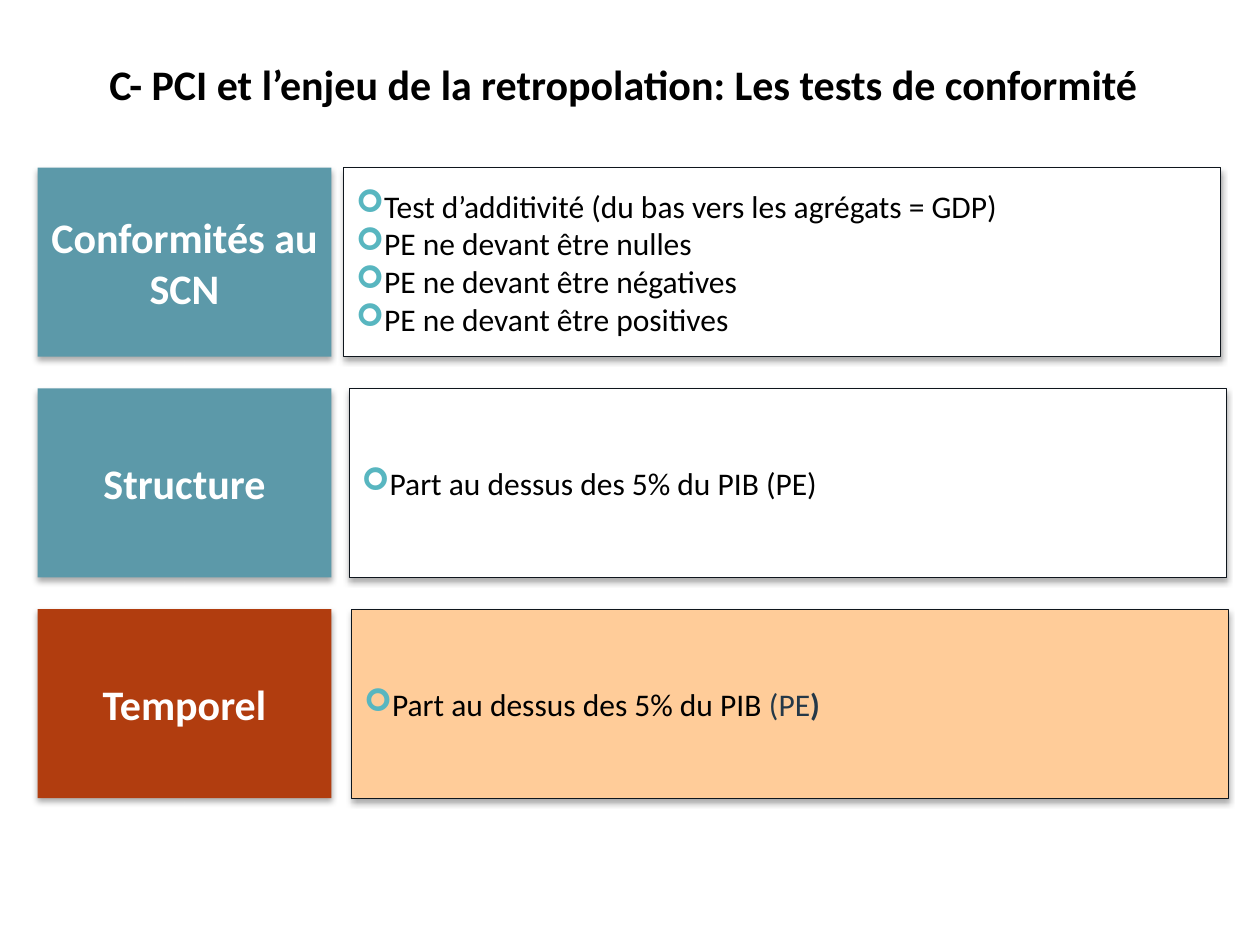
import lxml.etree
import pptx
import pptx.dml.color
import pptx.enum.shapes
import pptx.enum.text
import pptx.oxml.ns
import pptx.util

Cm = pptx.util.Cm
Pt = pptx.util.Pt
RGBColor = pptx.dml.color.RGBColor
ALIGN = pptx.enum.text.PP_ALIGN
qn = pptx.oxml.ns.qn

BLACK = RGBColor(0x00, 0x00, 0x00)
WHITE = RGBColor(0xFF, 0xFF, 0xFF)
TEAL = RGBColor(0x5C, 0x99, 0xA9)
RUST = RGBColor(0xB1, 0x3D, 0x0F)
PEACH = RGBColor(0xFF, 0xCC, 0x99)
EDGE = RGBColor(0x0F, 0x16, 0x1D)
NAVY = RGBColor(0x25, 0x38, 0x48)
AQUA = RGBColor(0x58, 0xB6, 0xC0)

TOP, STEP, HIGH = 3.38, 4.45, 3.81
ROWS = [
    ("Conformités au SCN", TEAL, 6.93, WHITE, [
        [("Test d’additivité (du bas vers les agrégats = GDP)", BLACK, False)],
        [("PE ne devant être nulles", BLACK, False)],
        [("PE ne devant être négatives", BLACK, False)],
        [("PE ne devant être positives", BLACK, False)],
    ]),
    ("Structure", TEAL, 7.04, WHITE, [
        [("Part au dessus des 5% du PIB (PE)", BLACK, False)],
    ]),
    ("Temporel", RUST, 7.09, PEACH, [
        [("Part au dessus des 5% du PIB ", BLACK, False),
         ("(PE", NAVY, False), (")", NAVY, True)],
    ]),
]


class Deck:
    """Hold the text style and the current slide, and draw its elements."""

    def __init__(self, slide, face="Calibri", head=24, body=18):
        self.slide = slide
        self.face = face
        self.head = head
        self.body = body

    def style(self, run, size, color, bold):
        font = run.font
        font.name = self.face
        font.size = Pt(size)
        font.bold = bold
        font.color.rgb = color

    def label(self, frame, text, color):
        frame.word_wrap = True
        frame.vertical_anchor = pptx.enum.text.MSO_ANCHOR.MIDDLE
        frame.text = text
        para = frame.paragraphs[0]
        para.alignment = ALIGN.CENTER
        self.style(para.runs[0], self.head, color, True)

    def title(self, text, left, top, width, height):
        box = self.slide.shapes.add_textbox(
            Cm(left), Cm(top), Cm(width), Cm(height))
        self.label(box.text_frame, text, BLACK)

    def shade(self, shape):
        shape.shadow.inherit = False
        effects = shape._element.spPr.find(qn("a:effectLst"))
        outer = lxml.etree.SubElement(
            effects, qn("a:outerShdw"), blurRad=str(Pt(3.5)),
            dist=str(Pt(2.2)), dir="5400000", rotWithShape="0")
        color = lxml.etree.SubElement(outer, qn("a:srgbClr"), val=str(BLACK))
        lxml.etree.SubElement(color, qn("a:alpha"), val="32000")

    def block(self, left, top, width, fill):
        shape = self.slide.shapes.add_shape(
            pptx.enum.shapes.MSO_SHAPE.RECTANGLE,
            Cm(left), Cm(top), Cm(width), Cm(HIGH))
        shape.fill.solid()
        shape.fill.fore_color.rgb = fill
        shape.line.fill.background()
        self.shade(shape)
        return shape

    def tile(self, text, top, fill):
        shape = self.block(0.76, top, 5.92, fill)
        self.label(shape.text_frame, text, WHITE)

    def bullet(self, para):
        props = para._p.get_or_add_pPr()
        props.set("marL", "0")
        props.set("indent", str(-Cm(1.27)))
        color = lxml.etree.SubElement(props, qn("a:buClr"))
        lxml.etree.SubElement(color, qn("a:srgbClr"), val=str(AQUA))
        lxml.etree.SubElement(props, qn("a:buFont"), typeface="Wingdings")
        lxml.etree.SubElement(props, qn("a:buChar"), char="➢")

    def panel(self, items, left, top, fill):
        shape = self.block(left, top, 17.68, fill)
        shape.line.color.rgb = EDGE
        shape.line.width = Pt(0.25)
        frame = shape.text_frame
        frame.word_wrap = True
        frame.vertical_anchor = pptx.enum.text.MSO_ANCHOR.MIDDLE
        for index, parts in enumerate(items):
            para = frame.add_paragraph() if index else frame.paragraphs[0]
            para.alignment = ALIGN.LEFT
            self.bullet(para)
            for text, color, bold in parts:
                run = para.add_run()
                run.text = text
                self.style(run, self.body, color, bold)


def main():
    show = pptx.Presentation()
    show.slide_width = Cm(25.4)
    show.slide_height = Cm(19.05)
    deck = Deck(show.slides.add_slide(show.slide_layouts[6]))
    deck.title("C- PCI et l’enjeu de la retropolation: Les tests de conformité",
               0.38, 0.81, 24.38, 1.75)
    for index, (name, tint, left, fill, items) in enumerate(ROWS):
        top = TOP + index * STEP
        deck.panel(items, left, top, fill)
        deck.tile(name, top, tint)
    show.save("out.pptx")


if __name__ == "__main__":
    main()
